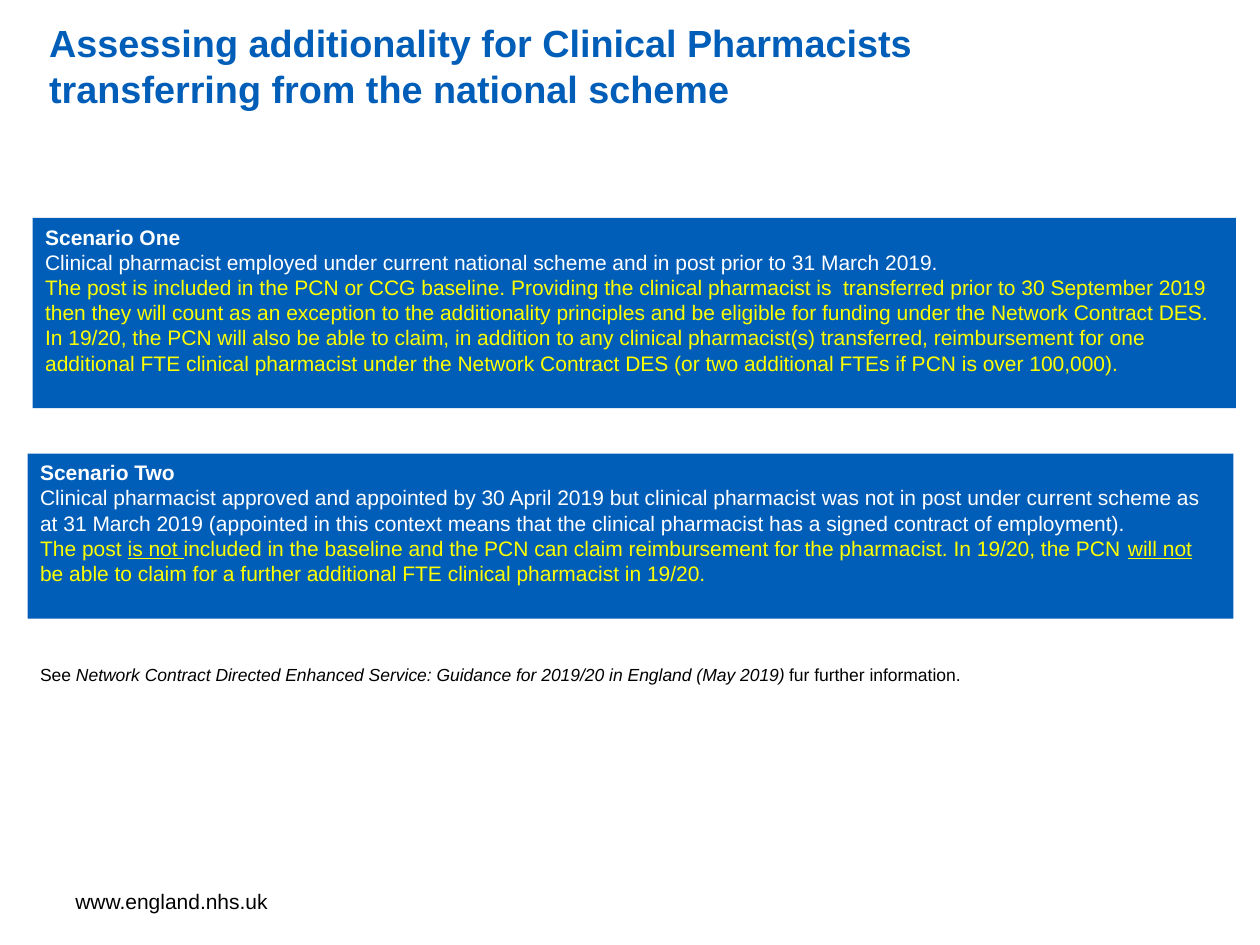
from dataclasses import dataclass

from pptx import Presentation
from pptx.dml.color import RGBColor
from pptx.enum.shapes import MSO_SHAPE
from pptx.enum.text import MSO_ANCHOR, MSO_AUTO_SIZE, PP_ALIGN
from pptx.slide import Slide
from pptx.util import Inches, Pt

BLUE = RGBColor(0x00, 0x5E, 0xB8)
WHITE = RGBColor(0xFF, 0xFF, 0xFF)
YELLOW = RGBColor(0xFF, 0xFF, 0x00)
BLACK = RGBColor(0x00, 0x00, 0x00)
RECTANGLE = MSO_SHAPE.RECTANGLE
TOP, MIDDLE = MSO_ANCHOR.TOP, MSO_ANCHOR.MIDDLE
FIXED = MSO_AUTO_SIZE.NONE
LEFT = PP_ALIGN.LEFT
TITLE_ONLY = 5

SCENARIO_ONE = (
    "Scenario One",
    "Clinical pharmacist employed under current national scheme and in post "
    "prior to 31 March 2019.",
    ["The post is included in the PCN or CCG baseline. Providing the clinical "
     "pharmacist is  transferred prior to 30 September 2019 then they will count "
     "as an exception to the additionality principles and be eligible for funding "
     "under the Network Contract DES. In 19/20, the PCN will also be able to claim, "
     "in addition to any clinical pharmacist(s) transferred, reimbursement for one "
     "additional FTE clinical pharmacist under the Network Contract DES (or two "
     "additional FTEs if PCN is over 100,000)."],
)
SCENARIO_TWO = (
    "Scenario Two",
    "Clinical pharmacist approved and appointed by 30 April 2019 but clinical "
    "pharmacist was not in post under current scheme as at 31 March 2019 "
    "(appointed in this context means that the clinical pharmacist has a signed "
    "contract of employment).",
    ["The post ", "is not ",
     "included in the baseline and the PCN can claim reimbursement for the "
     "pharmacist. In 19/20, the PCN ", "will not ",
     "be able to claim for a further additional FTE clinical pharmacist in 19/20."],
)


@dataclass
class PageBuilder:
    """Holds the text style and current slide, and adds each kind of element."""

    page: Slide
    font: str = "Arial"
    size: float = 12

    def place(self, box, left, top, width, height):
        box.left, box.top = Inches(left), Inches(top)
        box.width, box.height = Inches(width), Inches(height)

    def frame(self, box, anchor):
        frame = box.text_frame
        frame.word_wrap = True
        frame.auto_size = FIXED
        frame.vertical_anchor = anchor
        return frame

    def fill_paragraph(self, para, spans, color, size=None, bold=False,
                       underline_odd=False, italic_odd=False):
        para.alignment = LEFT
        para.font.name = self.font
        para.font.size = Pt(size or self.size)
        para.font.bold = bold
        para.font.color.rgb = color
        for index, text in enumerate(spans):
            span = para.add_run()
            span.text = text
            if index % 2:
                span.font.underline = underline_odd
                span.font.italic = italic_odd

    def title(self, text, *bounds):
        box = self.page.shapes.title
        self.place(box, *bounds)
        frame = self.frame(box, MIDDLE)
        self.fill_paragraph(frame.paragraphs[0], [text], BLUE, size=21.6, bold=True)

    def scenario(self, content, *bounds):
        box = self.page.shapes.add_shape(RECTANGLE, *map(Inches, bounds))
        box.shadow.inherit = False
        box.fill.solid()
        box.fill.fore_color.rgb = BLUE
        box.line.fill.background()
        frame = self.frame(box, TOP)
        heading, situation, outcome = content
        self.fill_paragraph(frame.paragraphs[0], [heading], WHITE, bold=True)
        self.fill_paragraph(frame.add_paragraph(), [situation], WHITE)
        self.fill_paragraph(frame.add_paragraph(), outcome, YELLOW, underline_odd=True)

    def text(self, spans, *bounds, size=None, anchor=TOP):
        box = self.page.shapes.add_textbox(*map(Inches, bounds))
        frame = self.frame(box, anchor)
        self.fill_paragraph(frame.paragraphs[0], spans, BLACK, size=size, italic_odd=True)


def main():
    deck = Presentation()
    deck.slide_width, deck.slide_height = Inches(10), Inches(7.5)
    builder = PageBuilder(deck.slides.add_slide(deck.slide_layouts[TITLE_ONLY]))
    builder.text(["www.england.nhs.uk"], 0.5, 6.95, 2.33, 0.4, anchor=MIDDLE)
    builder.title(
        "Assessing additionality for Clinical Pharmacists transferring from the "
        "national scheme", 0.29, 0.21, 8.45, 0.62)
    builder.scenario(SCENARIO_ONE, 0.26, 1.73, 9.55, 1.51)
    builder.scenario(SCENARIO_TWO, 0.22, 3.6, 9.57, 1.31)
    builder.text(
        ["See ",
         "Network Contract Directed Enhanced Service: Guidance for 2019/20 in "
         "England (May 2019) ",
         "fur further information."], 0.22, 5.22, 9.38, 0.27, size=10)
    deck.save("out.pptx")


if __name__ == "__main__":
    main()
